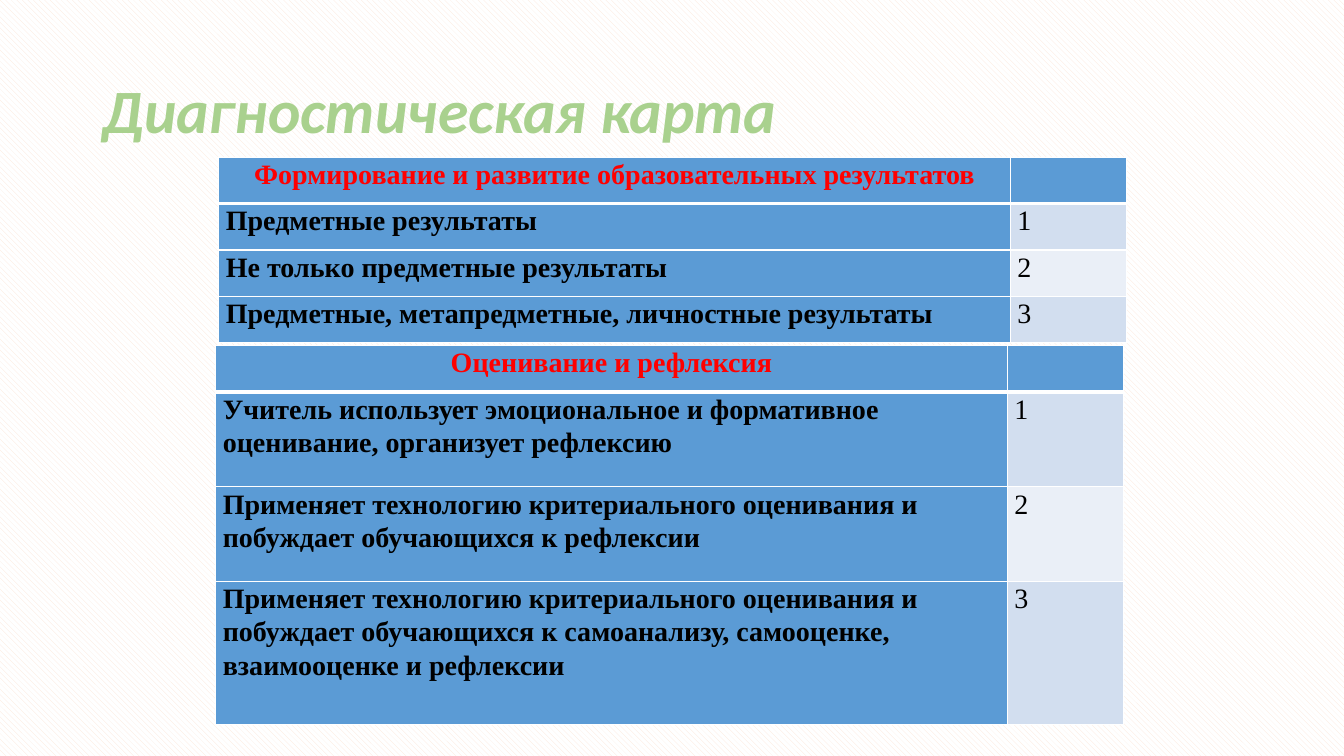
from lxml import etree
from pptx import Presentation
from pptx.dml.color import RGBColor
from pptx.enum.dml import MSO_PATTERN
from pptx.enum.text import MSO_ANCHOR, PP_ALIGN
from pptx.oxml.ns import qn
from pptx.util import Inches, Pt

DIAGONAL = MSO_PATTERN.WIDE_DOWNWARD_DIAGONAL
MIDDLE = MSO_ANCHOR.MIDDLE
LEFT, CENTER = PP_ALIGN.LEFT, PP_ALIGN.CENTER

BLUE, WHITE, RED, BLACK = "5B9BD5", "FFFFFF", "FF0000", "000000"
SCORE_BANDS = ["D2DEEF", "EAEFF7"]
COLUMN_WIDTHS = [7.85, 1.15]

# left, top, row heights, heading, criteria scored 1, 2, 3
CRITERIA_TABLES = [
    (2.14, 3.43, [0.46, 0.94, 0.94, 1.42], "Оценивание и рефлексия", [
        "Учитель использует эмоциональное и формативное оценивание, "
        "организует рефлексию",
        "Применяет технологию критериального оценивания и побуждает "
        "обучающихся к рефлексии",
        "Применяет технологию критериального оценивания и побуждает "
        "обучающихся к самоанализу, самооценке, взаимооценке и рефлексии",
    ]),
    (2.17, 1.56, [0.46] * 4,
     "Формирование и развитие образовательных результатов", [
         "Предметные результаты",
         "Не только предметные результаты",
         "Предметные, метапредметные, личностные результаты",
     ]),
]


def rgb(hex_color):
    return RGBColor.from_string(hex_color)


def add_borders(cell, top, bottom):
    """Draw white cell borders; top and bottom are widths in points."""
    properties = cell._tc.get_or_add_tcPr()
    for side, width in (("L", 1), ("R", 1), ("T", top), ("B", bottom)):
        line = etree.SubElement(properties, qn(f"a:ln{side}"), w=str(Pt(width)))
        fill = etree.SubElement(line, qn("a:solidFill"))
        etree.SubElement(fill, qn("a:srgbClr"), val=WHITE)


prs = Presentation()
prs.slide_width, prs.slide_height = Inches(13.33), Inches(7.5)
slide = prs.slides.add_slide(prs.slide_layouts[6])

background = slide.background.fill
background.patterned()
background.pattern = DIAGONAL
background.fore_color.rgb = rgb("FBE5D6")
background.back_color.rgb = rgb(WHITE)

title = slide.shapes.add_textbox(
    Inches(0.92), Inches(0.4), Inches(11.5), Inches(1.45)).text_frame
title.word_wrap = True
title.vertical_anchor = MIDDLE
heading_line = title.paragraphs[0]
heading_line.text = "Диагностическая карта"
heading_line.line_spacing = 0.9
heading_line.font.name = "Calibri"
heading_line.font.size = Pt(44)
heading_line.font.bold = heading_line.font.italic = True
heading_line.font.color.rgb = rgb("A9D18E")

for left, top, heights, heading, criteria in CRITERIA_TABLES:
    rows = [(heading, "")] + [(text, str(n)) for n, text in enumerate(criteria, 1)]
    table = slide.shapes.add_table(
        len(rows), len(COLUMN_WIDTHS), Inches(left), Inches(top),
        Inches(sum(COLUMN_WIDTHS)), Inches(sum(heights))).table
    for column, width in zip(table.columns, COLUMN_WIDTHS):
        column.width = Inches(width)
    for r, (texts, height) in enumerate(zip(rows, heights)):
        table.rows[r].height = Inches(height)
        is_header = r == 0
        for c, text in enumerate(texts):
            is_score = c == 1 and not is_header
            cell = table.cell(r, c)
            add_borders(cell, top=3 if r == 1 else 1, bottom=3 if is_header else 1)
            cell.fill.solid()
            cell.fill.fore_color.rgb = rgb(SCORE_BANDS[(r - 1) % 2] if is_score else BLUE)
            cell.margin_left = cell.margin_right = Inches(0.07)
            cell.margin_top = cell.margin_bottom = 0
            entry = cell.text_frame.paragraphs[0]
            entry.text = text
            entry.alignment = CENTER if is_header else LEFT
            entry.line_spacing = 1.07
            entry.font.name = "Times New Roman"
            entry.font.size = Pt(20)
            entry.font.bold = not is_score
            entry.font.color.rgb = rgb(RED if is_header else BLACK)

prs.save("out.pptx")
